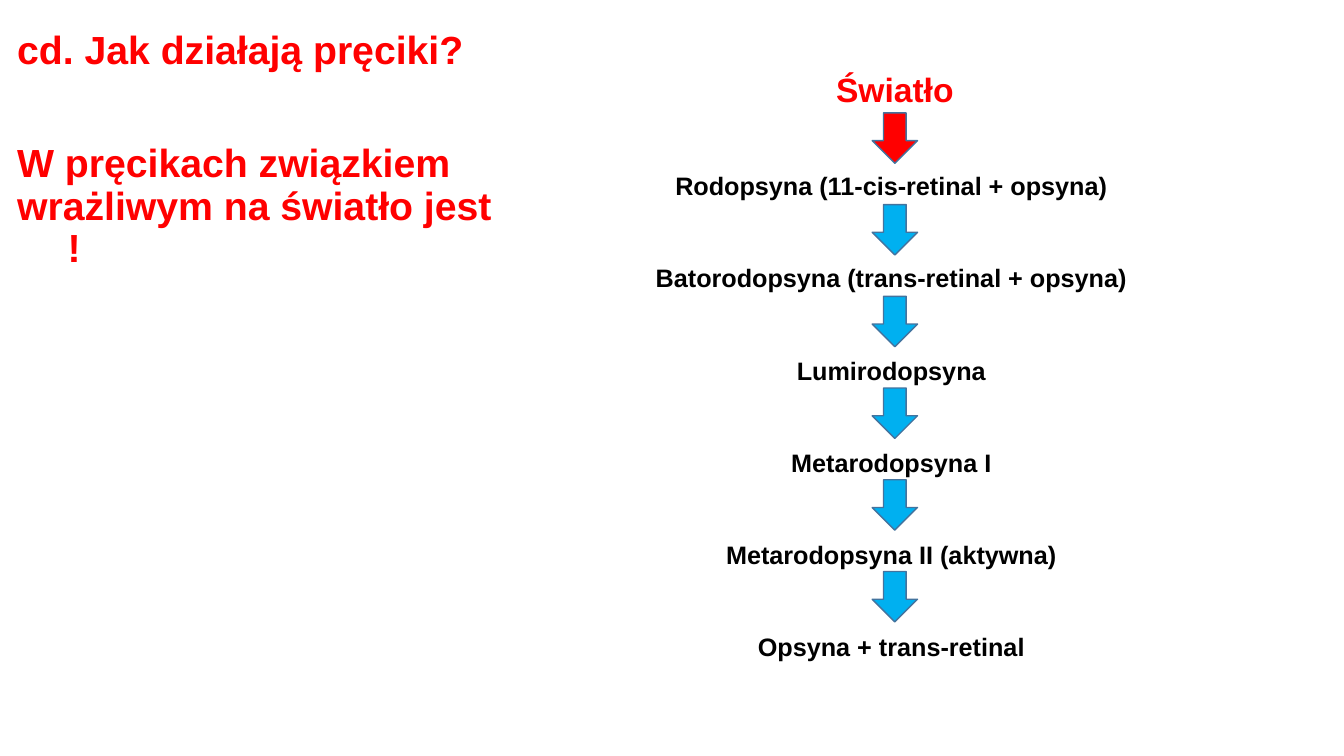
from pptx import Presentation
from pptx.dml.color import RGBColor
from pptx.enum.shapes import MSO_SHAPE as SHAPE
from pptx.enum.text import MSO_ANCHOR as ANCHOR, MSO_AUTO_SIZE as FIT, PP_ALIGN as ALIGN
from pptx.oxml import parse_xml
from pptx.oxml.ns import nsdecls
from pptx.util import Inches, Pt

# Content
QUESTION = "cd. Jak działają pręciki?"
STATEMENT = "W pręcikach związkiem wrażliwym na światło jest\v\t!"
STIMULUS = "Światło"
STAGES = [
    "Rodopsyna (11-cis-retinal + opsyna) ",
    "Batorodopsyna (trans-retinal + opsyna) ",
    "Lumirodopsyna ",
    "Metarodopsyna I ",
    "Metarodopsyna II (aktywna) ",
    "Opsyna + trans-retinal ",
]

COLORS = {"red": "FF0000", "blue": "00B0F0", "black": "000000",
          "white": "FFFFFF", "outline": "43739E"}
ARROW_LEFT, ARROW_TOP, ARROW_PITCH = 8.65, 1.12, 0.91
ARROW_W, ARROW_H = 0.45, 0.5


def color(name):
    return RGBColor.from_string(COLORS[name])


def write(p, text, size, ink, **layout):
    p.text = text
    for name, value in layout.items():
        setattr(p, name, value)
    for r in p.runs:
        for name, value in {"name": "Arial", "size": Pt(size), "bold": True}.items():
            setattr(r.font, name, value)
        r.font.color.rgb = color(ink)


def add_filled(kind, box, fill):
    sp = s.shapes.add_shape(kind, *map(Inches, box))
    sp.shadow.inherit = False
    sp.fill.solid()
    sp.fill.fore_color.rgb = color(fill)
    return sp


prs = Presentation()
prs.slide_width, prs.slide_height = Inches(13.33), Inches(7.5)
s = prs.slides.add_slide(prs.slide_layouts[1])
title = s.shapes.title
title.element.getparent().remove(title.element)

# Question and statement on the left
body = s.placeholders[1]
body.left, body.top, body.width, body.height = map(Inches, (0.07, 0.25, 5.65, 2.68))
tf = body.text_frame
tf.auto_size, tf.vertical_anchor, tf.word_wrap = FIT.NONE, ANCHOR.TOP, True
for i, (text, gap) in enumerate([(QUESTION, 0), (STATEMENT, 51)]):
    p = tf.paragraphs[0] if i == 0 else tf.add_paragraph()
    write(p, text, 28, "red", line_spacing=0.9, space_before=Pt(gap))
    pPr = p._p.get_or_add_pPr()
    pPr.set("marL", "0")
    pPr.set("indent", "0")
    pPr.append(parse_xml(f"<a:buNone {nsdecls('a')}/>"))
    pPr.append(parse_xml(f'<a:tabLst {nsdecls("a")}>'
                         f'<a:tab pos="{Inches(2.1)}" algn="l"/></a:tabLst>'))

# Chain of stages on the right
chain = add_filled(SHAPE.RECTANGLE, (5.53, 0.3, 6.69, 6.26), "white")
chain.line.fill.background()
tf = chain.text_frame
tf.vertical_anchor, tf.word_wrap, tf.margin_top = ANCHOR.TOP, True, Inches(0.38)
write(tf.paragraphs[0], STIMULUS, 24, "red", alignment=ALIGN.CENTER)
for stage in STAGES:
    write(tf.add_paragraph(), stage, 18, "black",
          alignment=ALIGN.CENTER, space_before=Pt(44.2))

# One arrow above each stage, the first for the light
for i in range(len(STAGES)):
    box = (ARROW_LEFT, ARROW_TOP + i * ARROW_PITCH, ARROW_W, ARROW_H)
    arrow = add_filled(SHAPE.DOWN_ARROW, box, "blue" if i else "red")
    arrow.line.color.rgb = color("outline")
    arrow.line.width = Pt(1)

prs.save("out.pptx")
